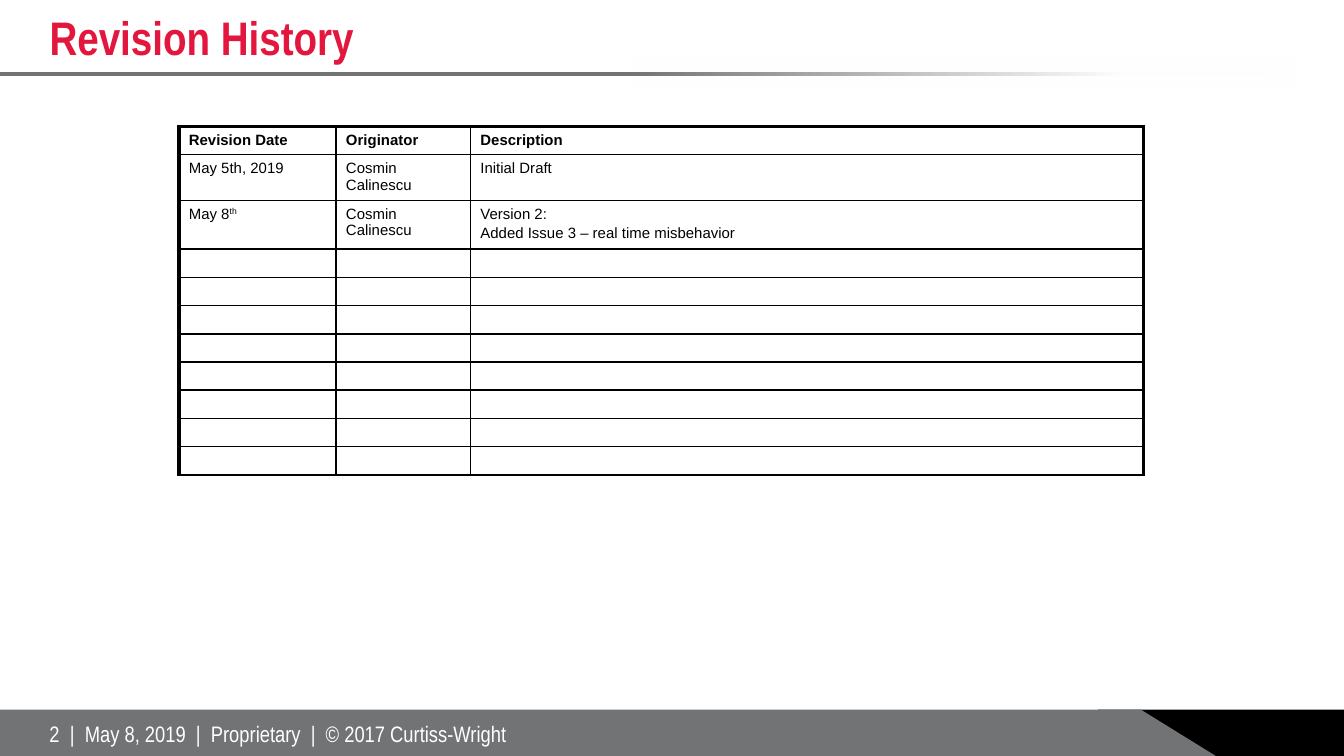
from dataclasses import dataclass

from lxml import etree
from pptx import Presentation
from pptx.dml.color import RGBColor
from pptx.enum.shapes import MSO_CONNECTOR, MSO_SHAPE as SHAPE
from pptx.enum.text import MSO_ANCHOR as ANCHOR
from pptx.oxml.ns import qn
from pptx.util import Inches, Pt


@dataclass(frozen=True)
class Theme:
    red: str = "E3173E"
    gray: str = "717375"
    black: str = "000000"
    white: str = "FFFFFF"
    body_font: str = "Arial"
    brand_font: str = "Arial Narrow"
    title_size: float = 25.2
    footer_size: float = 12
    cell_size: float = 8
    thick: float = 2.25
    thin: float = 1


T = Theme()
COLUMNS = [1.17, 1, 5.01]
ROW_COUNT = 11
ROW_HEIGHT = 0.21
# Each cell is a list of paragraphs, each paragraph a list of runs
REVISIONS = [
    [[["Revision Date"]], [["Originator"]], [["Description"]]],
    [[["May 5th, 2019"]], [["Cosmin Calinescu"]], [["Initial Draft"]]],
    [[["May 8", "th"]], [["Cosmin Calinescu"]],
     [["Version 2:"], ["Added Issue 3 – real time misbehavior"]]],
]


def rgb(value):
    return RGBColor.from_string(value)


def add_run(p, text, font, size, color, bold=False):
    r = p.add_run()
    r.text = text
    r.font.name, r.font.size, r.font.bold = font, Pt(size), bold
    r.font.color.rgb = rgb(color)
    return r


def add_block(s, kind, x, y, w, h, color=None):
    sp = s.shapes.add_shape(kind, Inches(x), Inches(y), Inches(w), Inches(h))
    sp.shadow.inherit = False
    sp.line.fill.background()
    if color:
        sp.fill.solid()
        sp.fill.fore_color.rgb = rgb(color)
    return sp


def add_label(s, x, y, w, h, text, size, color, bold=False):
    sp = s.shapes.add_textbox(Inches(x), Inches(y), Inches(w), Inches(h))
    tf = sp.text_frame
    tf.word_wrap = True
    tf.vertical_anchor = ANCHOR.MIDDLE
    add_run(tf.paragraphs[0], text, T.brand_font, size, color, bold)


def add_header(s, x, y, w, h):
    # Rule under the title
    rule = s.shapes.add_connector(MSO_CONNECTOR.STRAIGHT, Inches(x), Inches(y + h),
                                  Inches(x + 9.45), Inches(y + h))
    rule.line.color.rgb = rgb(T.gray)
    rule.line.width = Pt(2)
    etree.SubElement(rule._element.spPr, qn("a:effectLst"))

    # White veil that fades the rule out to the right
    veil = add_block(s, SHAPE.RECTANGLE, x + 4.69, y + h - 0.12, 4.96, 0.21)
    veil.fill.gradient()
    veil.fill.gradient_angle = 180
    for stop, position in zip(veil.fill.gradient_stops, (0.26, 1)):
        stop.position = position
        stop.color.rgb = rgb(T.white)
    clear = veil._element.spPr.findall(".//" + qn("a:srgbClr"))[-1]
    etree.SubElement(clear, qn("a:alpha"), val="0")

    # Title
    add_label(s, x + 0.27, y, w - 0.55, h, "Revision History", T.title_size, T.red, True)


def add_footer(s, x, y, w, h):
    # Black corner, gray band and its slanted end
    add_block(s, SHAPE.RECTANGLE, x + w - 1.83, y, 1.83, h, T.black)
    add_block(s, SHAPE.RECTANGLE, x, y, 8.49, h, T.gray)
    slant = add_block(s, SHAPE.ISOSCELES_TRIANGLE, x + 8.36, y, 0.71, h, T.gray)
    slant.adjustments[0] = 0.18

    add_label(s, x + 0.27, y + 0.03, 4.14, 0.3,
              "2  |  May 8, 2019  |  Proprietary  |  © 2017 Curtiss-Wright",
              T.footer_size, T.white)


def set_borders(cell, widths):
    tc_pr = cell._tc.get_or_add_tcPr()
    for i, (side, width) in enumerate(widths.items()):
        ln = etree.Element(qn(f"a:ln{side}"), w=str(Pt(width)))
        fill = etree.SubElement(ln, qn("a:solidFill"))
        etree.SubElement(fill, qn("a:srgbClr"), val=T.black)
        tc_pr.insert(i, ln)


def fill_cell(cell, paragraphs, bold):
    cell.margin_left = cell.margin_right = Pt(5.4)
    cell.margin_top = cell.margin_bottom = Pt(2.7)
    cell.fill.background()
    tf = cell.text_frame
    if not paragraphs:
        # Keeps an empty row as low as a line of text
        etree.SubElement(tf.paragraphs[0]._p, qn("a:endParaRPr"), sz=str(T.cell_size * 100))
    for i, runs in enumerate(paragraphs):
        p = tf.add_paragraph() if i else tf.paragraphs[0]
        if i:
            p.space_before = Pt(0.2 * T.cell_size)
        for j, text in enumerate(runs):
            r = add_run(p, text, T.body_font, T.cell_size, T.black, bold)
            if j:  # ordinal suffix
                r.font._element.set("baseline", "30000")


def add_revisions(s, x, y, w, h):
    frame = s.shapes.add_table(ROW_COUNT, len(COLUMNS), Inches(x), Inches(y),
                               Inches(w), Inches(h))
    table = frame.table
    table.first_row = table.horz_banding = False
    for column, width in zip(table.columns, COLUMNS):
        column.width = Inches(width)
    last = len(COLUMNS) - 1
    for i, row in enumerate(table.rows):
        row.height = Inches(ROW_HEIGHT)
        for j, cell in enumerate(row.cells):
            content = REVISIONS[i][j] if i < len(REVISIONS) else []
            fill_cell(cell, content, bold=i == 0)
            set_borders(cell, {
                "L": T.thick if j == 0 else T.thin,
                "R": T.thick if j == last else T.thin,
                "T": T.thick if i == 0 else T.thin,
                "B": T.thin,
            })


def main():
    prs = Presentation()
    prs.slide_width = Inches(10)
    prs.slide_height = prs.slide_width * 9 // 16
    s = prs.slides.add_slide(prs.slide_layouts[6])
    add_header(s, 0, 0, 10, 0.55)
    add_footer(s, 0, 5.28, 10, 0.36)
    add_revisions(s, 1.33, 0.94, sum(COLUMNS), ROW_COUNT * ROW_HEIGHT)
    prs.save("out.pptx")


if __name__ == "__main__":
    main()
